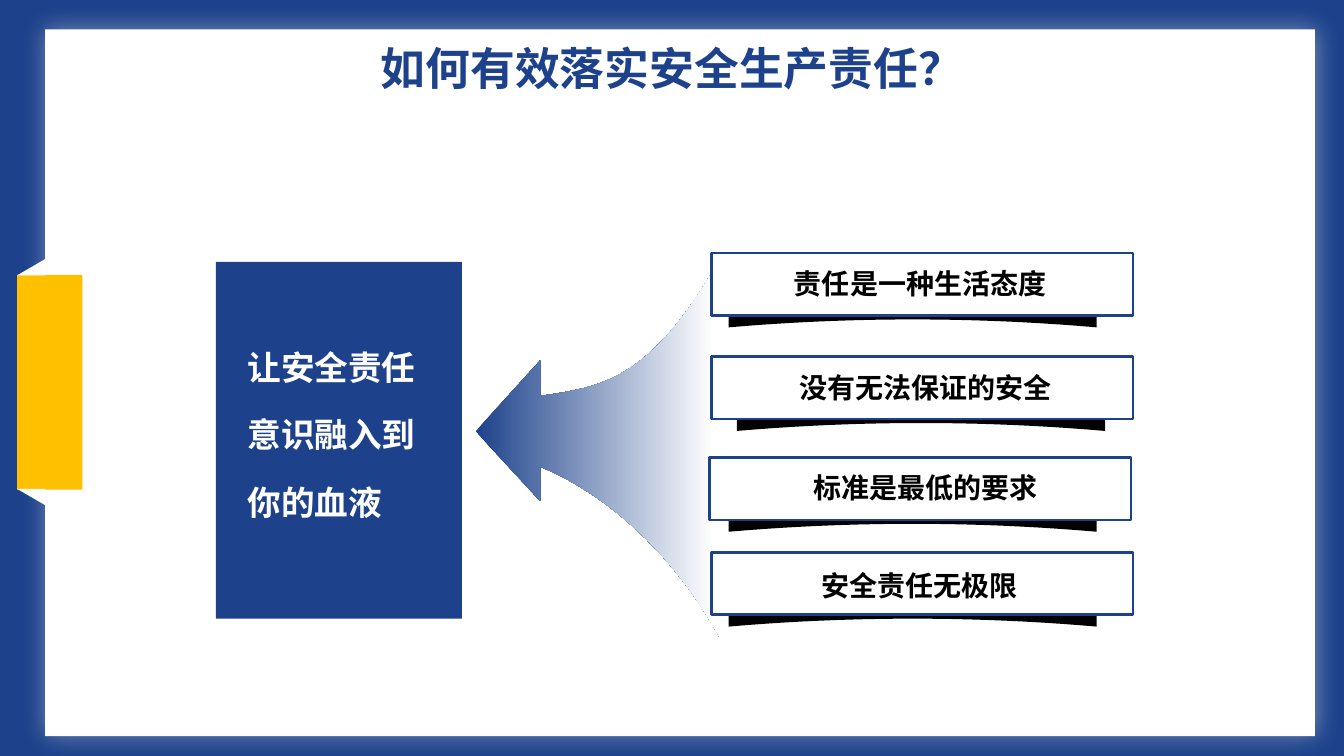
"""Builds the slide on putting responsibility for work safety into practice."""
import pptx
import pptx.dml.color
import pptx.enum.shapes
import pptx.enum.text
import pptx.oxml
import pptx.oxml.ns
import pptx.util
from pptx.util import Cm

RGBColor = pptx.dml.color.RGBColor
BLUE = RGBColor(0x1D, 0x42, 0x8B)
YELLOW = RGBColor(0xFF, 0xC0, 0x00)
WHITE = RGBColor(0xFF, 0xFF, 0xFF)
BLACK = RGBColor(0x00, 0x00, 0x00)
FONT = "Noto Sans CJK SC"
PRESET = pptx.enum.shapes.MSO_SHAPE
BAR_WIDTH, BAR_HEIGHT = 10.62, 1.57
RIBBON_WIDTH, RIBBON_HEIGHT, RIBBON_BEND, RIBBON_DROP = 9.28, 0.75, 0.2, 0.3
CURVE_STEPS = 20

presentation = pptx.Presentation()
presentation.slide_width = Cm(33.87)
presentation.slide_height = Cm(19.05)
slide = presentation.slides.add_slide(presentation.slide_layouts[5])
slide.background.fill.solid()
slide.background.fill.fore_color.rgb = BLUE


def add_block(preset, left, top, width, height, color):
    shape = slide.shapes.add_shape(preset, Cm(left), Cm(top), Cm(width), Cm(height))
    shape.shadow.inherit = False
    shape.fill.solid()
    shape.fill.fore_color.rgb = color
    shape.line.fill.background()
    return shape


def format_paragraph(paragraph, size, color):
    for run in paragraph.runs:
        run.font.size = pptx.util.Pt(size)
        run.font.bold = True
        run.font.color.rgb = color
        run.font.name = FONT
        east_asian = pptx.oxml.parse_xml(
            f'<a:ea {pptx.oxml.ns.nsdecls("a")} typeface="{FONT}"/>')
        run.font.element.find(pptx.oxml.ns.qn("a:latin")).addnext(east_asian) \
            if hasattr(run.font, "element") else \
            run._r.rPr.find(pptx.oxml.ns.qn("a:latin")).addnext(east_asian)


panel = add_block(PRESET.RECTANGLE, 1.14, 0.74, 32, 17.81, WHITE)
effects = panel.element.spPr.find(pptx.oxml.ns.qn("a:effectLst"))
effects.append(pptx.oxml.parse_xml(
    f'<a:outerShdw {pptx.oxml.ns.nsdecls("a")} blurRad="228600" dist="12700" dir="0" '
    'algn="ctr" rotWithShape="0"><a:srgbClr val="FFFFFF"><a:alpha val="40000"/>'
    '</a:srgbClr></a:outerShdw>'))
add_block(PRESET.RECTANGLE, 0.43, 6.93, 1.65, 5.41, YELLOW)
for fold_top, flips in [(6.53, ["flipH"]), (12.32, ["flipH", "flipV"])]:
    fold = add_block(PRESET.RIGHT_TRIANGLE, 0.43, fold_top, 0.71, 0.41, WHITE)
    for flip in flips:
        fold.element.spPr.xfrm.set(flip, "1")

upper_curve = [(18.14, 6.53), (16.36, 9.68), (15.09, 9.75), (13.61, 9.98)]
arrow_head = [(13.61, 9.09), (11.99, 10.87), (13.61, 12.62)]
lower_curve = [(13.61, 11.76), (15.24, 12.42), (16.97, 13.92), (18.16, 16.1)]
curve_points = []
for curve in (upper_curve, lower_curve):
    points = []
    for step in range(CURVE_STEPS + 1):
        t = step / CURVE_STEPS
        weights = [(1 - t) ** 3, 3 * t * (1 - t) ** 2, 3 * t ** 2 * (1 - t), t ** 3]
        points.append(tuple(sum(weight * point[axis] for weight, point in zip(weights, curve))
                            for axis in (0, 1)))
    curve_points.append(points)
outline = [(Cm(x), Cm(y)) for x, y in curve_points[0] + arrow_head + curve_points[1]]
builder = slide.shapes.build_freeform(*outline[0])
builder.add_line_segments(outline[1:])
arrow = builder.convert_to_shape()
arrow.shadow.inherit = False
arrow.line.fill.background()
arrow.fill.gradient()
arrow.fill.gradient_angle = 0
for stop, color, position in zip(arrow.fill.gradient_stops, (BLUE, WHITE), (0, 0.97)):
    stop.color.rgb = color
    stop.position = position

title = slide.shapes.title
title.left, title.top, title.width, title.height = Cm(9.09), Cm(0.89), Cm(15.7), Cm(1.63)
title.text_frame.text = "如何有效落实安全生产责任？"
title.text_frame.vertical_anchor = pptx.enum.text.MSO_ANCHOR.TOP
title.text_frame.paragraphs[0].alignment = pptx.enum.text.PP_ALIGN.CENTER
format_paragraph(title.text_frame.paragraphs[0], 32, BLUE)
arrow.element.addnext(title.element)

principles = [
    ("责任是一种生活态度", 17.93, 6.38, 18.36, 19.76, 6.6),
    ("没有无法保证的安全", 17.93, 8.99, 18.57, 19.89, 9.22),
    ("标准是最低的要求", 17.88, 11.53, 18.36, 20.24, 11.73),
    ("安全责任无极限", 17.93, 13.92, 18.36, 20.45, 14.2),
]
for text, bar_left, bar_top, ribbon_left, label_left, label_top in principles:
    ribbon_bottom = bar_top + BAR_HEIGHT + RIBBON_DROP
    ribbon_top = ribbon_bottom - RIBBON_HEIGHT
    outline = [(ribbon_left, ribbon_top + RIBBON_BEND),
               (ribbon_left + RIBBON_WIDTH / 2, ribbon_top),
               (ribbon_left + RIBBON_WIDTH, ribbon_top + RIBBON_BEND)]
    for step in range(CURVE_STEPS, -1, -1):
        t = step / CURVE_STEPS
        outline.append((ribbon_left + RIBBON_WIDTH * t,
                        ribbon_bottom - RIBBON_BEND * 4 * t * (1 - t)))
    outline = [(Cm(x), Cm(y)) for x, y in outline]
    builder = slide.shapes.build_freeform(*outline[0])
    builder.add_line_segments(outline[1:])
    ribbon = builder.convert_to_shape()
    ribbon.shadow.inherit = False
    ribbon.fill.solid()
    ribbon.fill.fore_color.rgb = BLACK
    ribbon.line.fill.background()

    bar = add_block(PRESET.RECTANGLE, bar_left, bar_top, BAR_WIDTH, BAR_HEIGHT, WHITE)
    bar.line.color.rgb = BLUE
    bar.line.width = pptx.util.Pt(1.75)

    label = slide.shapes.add_textbox(
        Cm(label_left), Cm(label_top), Cm(0.55 + 0.71 * len(text)), Cm(1.12))
    label.text_frame.text = text
    label.text_frame.word_wrap = False
    format_paragraph(label.text_frame.paragraphs[0], 20, BLACK)

add_block(PRESET.RECTANGLE, 5.44, 6.6, 6.2, 8.99, BLUE)
message = slide.shapes.add_textbox(Cm(5.99), Cm(8.1), Cm(5.26), Cm(5.28))
message.text_frame.word_wrap = True
message.text_frame.text = "让安全责任\n意识融入到\n你的血液"
for index, paragraph in enumerate(message.text_frame.paragraphs):
    paragraph.line_spacing = 1.5
    paragraph.space_before = pptx.util.Pt(5 if index else 0)
    format_paragraph(paragraph, 24, WHITE)

presentation.save("out.pptx")
